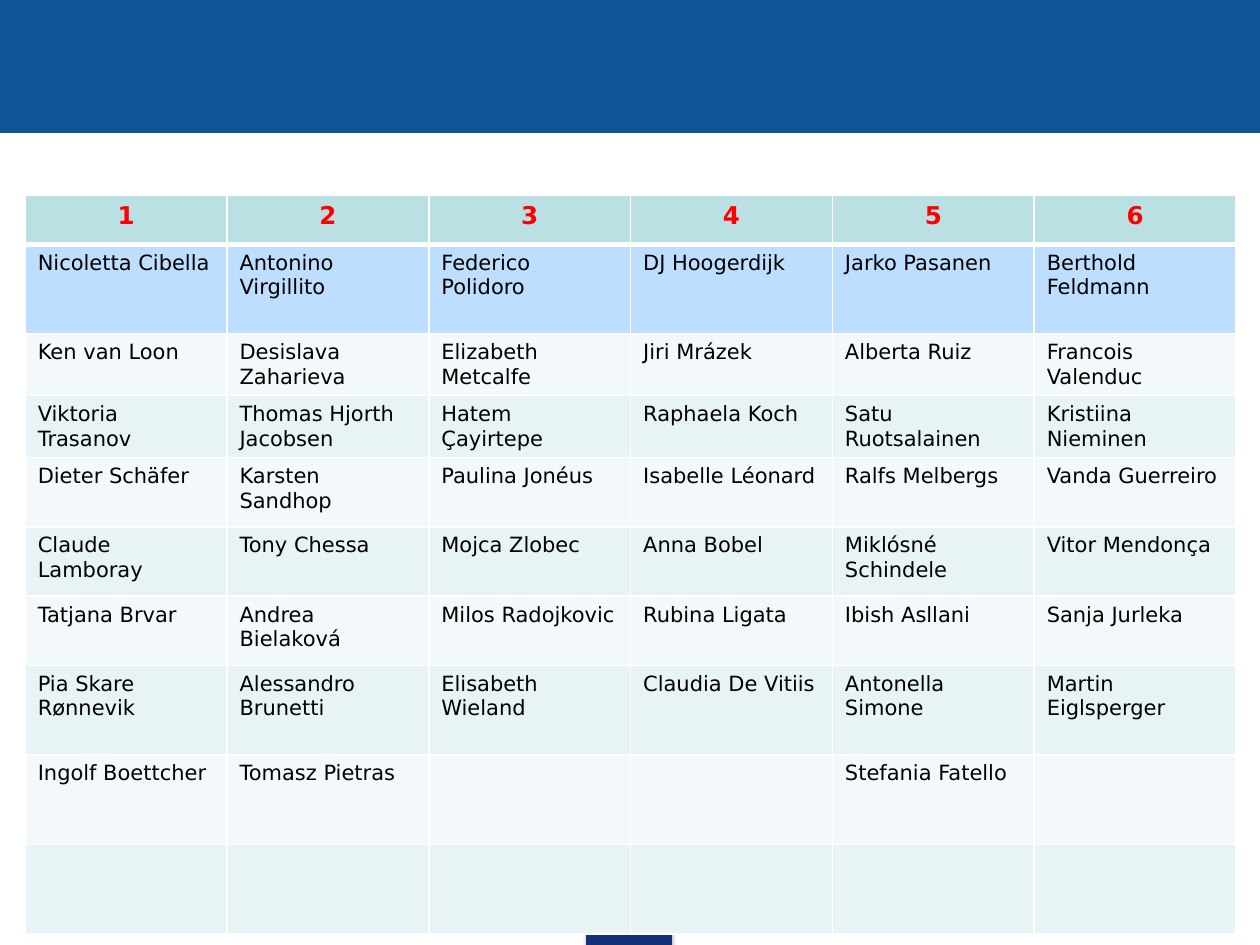
from dataclasses import dataclass

from lxml import etree
from pptx import Presentation
from pptx.dml.color import RGBColor
from pptx.enum.shapes import MSO_SHAPE
from pptx.enum.text import PP_ALIGN
from pptx.oxml import parse_xml
from pptx.oxml.ns import nsdecls, qn
from pptx.util import Inches, Pt

RECT = MSO_SHAPE.RECTANGLE
CENTER, LEFT = PP_ALIGN.CENTER, PP_ALIGN.LEFT


@dataclass(frozen=True)
class Theme:
    font: str = "DejaVu Sans"
    band: str = "0F5494"
    tab: str = "133176"
    head: str = "BBE0E3"
    lead: str = "BDDEFF"
    rows: tuple = ("F3F9FA", "E7F3F4")
    rule: str = "FFFFFF"
    number: str = "FF0000"
    ink: str = "000000"
    head_size: int = 14
    body_size: int = 12
    thin: int = 1
    thick: int = 3


# Groups: one column each, the lead in the first row
NUMBERS = ["1", "2", "3", "4", "5", "6"]
NAMES = [
    ["Nicoletta Cibella", "Antonino Virgillito", "Federico Polidoro",
     "DJ Hoogerdijk", "Jarko Pasanen", "Berthold Feldmann"],
    ["Ken van Loon", "Desislava Zaharieva", "Elizabeth Metcalfe",
     "Jiri Mrázek", "Alberta Ruiz", "Francois Valenduc"],
    ["Viktoria Trasanov", "Thomas Hjorth Jacobsen", "Hatem Çayirtepe",
     "Raphaela Koch", "Satu Ruotsalainen", "Kristiina Nieminen"],
    ["Dieter Schäfer", "Karsten Sandhop", "Paulina Jonéus",
     "Isabelle Léonard", "Ralfs Melbergs", "Vanda Guerreiro"],
    ["Claude Lamboray", "Tony Chessa", "Mojca Zlobec",
     "Anna Bobel", "Miklósné Schindele", "Vitor Mendonça"],
    ["Tatjana Brvar", "Andrea\nBielaková", "Milos Radojkovic",
     "Rubina Ligata", "Ibish Asllani", "Sanja Jurleka"],
    ["Pia Skare Rønnevik", "Alessandro Brunetti", "Elisabeth Wieland",
     "Claudia De Vitiis", "Antonella Simone", "Martin Eiglsperger"],
    ["Ingolf Boettcher", "Tomasz Pietras", "", "", "Stefania Fatello", ""],
    [""] * 6,
]
HEIGHTS = [0.39, 0.71, 0.47, 0.47, 0.55, 0.55, 0.55, 0.71, 0.71, 0.71]


class Deck:
    def __init__(self, theme):
        self.theme = theme
        self.prs = Presentation()
        self.prs.slide_width, self.prs.slide_height = Inches(10), Inches(7.5)
        self.slide = self.prs.slides.add_slide(self.prs.slide_layouts[6])

    def bar(self, x, y, w, h, color):
        box = self.slide.shapes.add_shape(
            RECT, Inches(x), Inches(y), Inches(w), Inches(h))
        box.shadow.inherit = False
        box.fill.solid()
        box.fill.fore_color.rgb = RGBColor.from_string(color)
        box.line.color.rgb = RGBColor.from_string(color)
        box.line.width = Pt(0.75)
        return box

    def shade(self, box):
        effect = box._element.spPr.find(qn("a:effectLst"))
        effect.append(parse_xml(
            f'<a:outerShdw {nsdecls("a")} blurRad="{Pt(3.1)}" '
            f'dist="{Pt(1.8)}" dir="5400000" rotWithShape="0">'
            '<a:srgbClr val="000000"><a:alpha val="35000"/></a:srgbClr>'
            '</a:outerShdw>'))

    def border(self, cell, top, bottom):
        thin = self.theme.thin
        props = cell._tc.get_or_add_tcPr()
        for side, width in zip("LRTB", (thin, thin, top, bottom)):
            line = etree.SubElement(props, qn(f"a:ln{side}"), w=str(Pt(width)))
            fill = etree.SubElement(line, qn("a:solidFill"))
            etree.SubElement(fill, qn("a:srgbClr"), val=self.theme.rule)

    def label(self, cell, text, head):
        t = self.theme
        size, color = (t.head_size, t.number) if head else (t.body_size, t.ink)
        frame = cell.text_frame
        for i, part in enumerate(text.split("\n")):
            para = frame.add_paragraph() if i else frame.paragraphs[0]
            para.alignment = CENTER if head else LEFT
            if not part:
                para.font.size = Pt(size)
                continue
            run = para.add_run()
            run.text = part
            run.font.name = t.font
            run.font.size = Pt(size)
            run.font.bold = head
            run.font.color.rgb = RGBColor.from_string(color)

    def table(self, x, y, w, heights, data):
        t = self.theme
        count = len(data[0])
        grid = self.slide.shapes.add_table(
            len(data), count, Inches(x), Inches(y),
            Inches(w), Inches(sum(heights))).table
        for col in grid.columns:
            col.width = Inches(w / count)
        for r, (height, texts) in enumerate(zip(heights, data)):
            grid.rows[r].height = Inches(height)
            fill = (t.head, t.lead)[r] if r < 2 else t.rows[r % 2]
            top = t.thick if r == 1 else t.thin
            bottom = t.thick if r == 0 else t.thin
            for c, text in enumerate(texts):
                cell = grid.cell(r, c)
                self.border(cell, top, bottom)
                cell.fill.solid()
                cell.fill.fore_color.rgb = RGBColor.from_string(fill)
                self.label(cell, text, r == 0)


def main():
    theme = Theme()
    deck = Deck(theme)
    # Top band and footer tab
    deck.bar(0, 0, 10, 1.05, theme.band)
    deck.shade(deck.bar(4.66, 7.28, 0.67, 0.22, theme.tab))
    # Group list
    deck.table(0.2, 1.55, 9.61, HEIGHTS, [NUMBERS] + NAMES)
    deck.prs.save("out.pptx")


if __name__ == "__main__":
    main()
